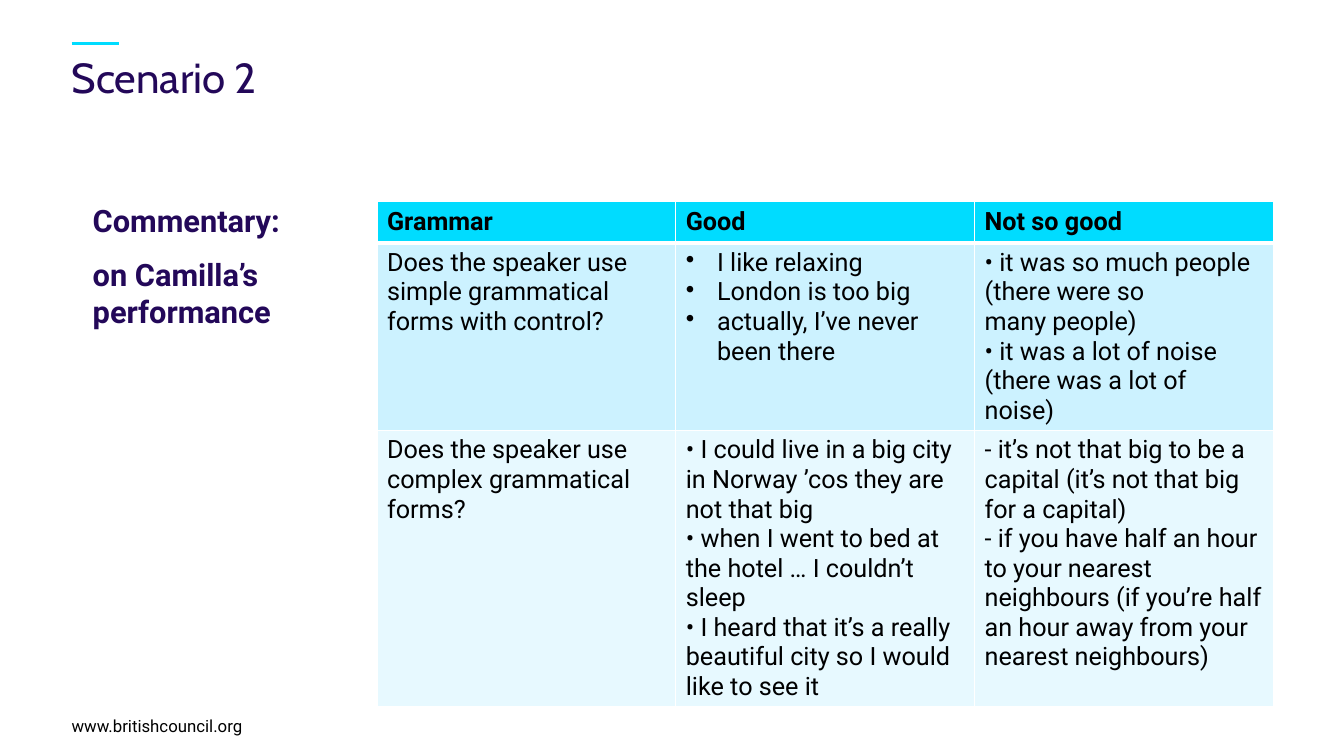
from lxml import etree
from pptx import Presentation
from pptx import util as u
from pptx.dml.color import RGBColor
from pptx.enum import shapes, text
from pptx.oxml import ns

SLIDE_W, SLIDE_H = u.Inches(13.33), u.Inches(7.5)
CYAN = RGBColor(0x00, 0xDC, 0xFF)
PALE = RGBColor(0xCC, 0xF2, 0xFF)
PALER = RGBColor(0xE7, 0xF9, 0xFF)
INDIGO = RGBColor(0x23, 0x08, 0x59)
BLACK = RGBColor(0x00, 0x00, 0x00)
WHITE = RGBColor(0xFF, 0xFF, 0xFF)
MARGIN = 5.33
TOP = 26.67

ROW_HEIGHTS = (5.47, 24.8, 36.53)
ROW_FILLS = (CYAN, PALE, PALER)
BULLETED = (1, 1)
GRAMMAR = (
    ("Grammar", "Good", "Not so good"),
    (
        "Does the speaker use simple grammatical forms with control?",
        "I like relaxing\nLondon is too big\nactually, I’ve never been there",
        "• it was so much people (there were so\nmany people)\n"
        "• it was a lot of noise (there was a lot of\nnoise)",
    ),
    (
        "Does the speaker use complex grammatical forms?",
        "• I could live in a big city in Norway ’cos they are not that big\n"
        "• when I went to bed at the hotel … I couldn’t sleep\n"
        "• I heard that it’s a really beautiful city so I would like to see it",
        "- it’s not that big to be a capital (it’s not that big for a capital)\n"
        "- if you have half an hour to your nearest neighbours "
        "(if you’re half an hour away from your nearest neighbours)",
    ),
)


def across(share):
    return round(SLIDE_W * share / 100)


def down(share):
    return round(SLIDE_H * share / 100)


def area(left, top, width, height):
    return across(left), down(top), across(width), down(height)


def set_bullet(paragraph, indent, symbol=None):
    props = paragraph._p.get_or_add_pPr()
    props.set("marL", str(indent))
    props.set("indent", str(-indent))
    if symbol:
        etree.SubElement(props, ns.qn("a:buChar")).set("char", symbol)
    else:
        etree.SubElement(props, ns.qn("a:buNone"))


def write(frame, wording, face, size, colour, bold=False):
    frame.text = wording
    for paragraph in frame.paragraphs:
        paragraph.alignment = text.PP_ALIGN.LEFT
        for run in paragraph.runs:
            run.font.name = face
            run.font.size = u.Pt(size)
            run.font.bold = bold
            run.font.color.rgb = colour


def place(box, bounds, anchor=text.MSO_ANCHOR.TOP):
    box.left, box.top, box.width, box.height = bounds
    frame = box.text_frame
    frame.margin_left = frame.margin_right = 0
    frame.margin_top = frame.margin_bottom = 0
    frame.word_wrap = True
    frame.auto_size = text.MSO_AUTO_SIZE.NONE
    frame.vertical_anchor = anchor
    return frame


def add_accent(slide):
    accent = slide.shapes.add_connector(
        shapes.MSO_CONNECTOR.STRAIGHT,
        across(MARGIN), down(5.73), across(8.85), down(5.73))
    accent.line.color.rgb = CYAN
    accent.line.width = u.Pt(2.4)
    etree.SubElement(accent._element.spPr, ns.qn("a:effectLst"))


def add_heading(slide):
    heading = place(slide.shapes.title, area(MARGIN, 7.33, 89.8, 11.6))
    write(heading, "Scenario 2", "Cabin", 30, INDIGO)
    heading.paragraphs[0].line_spacing = u.Pt(33)


def add_commentary(slide):
    commentary = place(slide.placeholders[1], area(6.9, TOP, 18.75, 57.87))
    write(commentary, "Commentary:\non Camilla’s performance", "Roboto", 22, INDIGO, True)
    for position, paragraph in enumerate(commentary.paragraphs):
        set_bullet(paragraph, 0)
        paragraph.space_before = u.Pt(6 if position else 0)
        paragraph.space_after = u.Pt(6)


def rule_cell(cell, is_header):
    props = cell._tc.get_or_add_tcPr()
    for side in "LRTB":
        points = 3 if is_header and side == "B" else 1
        edge = etree.SubElement(props, ns.qn(f"a:ln{side}"))
        edge.set("w", str(u.Pt(points)))
        fill = etree.SubElement(edge, ns.qn("a:solidFill"))
        etree.SubElement(fill, ns.qn("a:srgbClr")).set("val", str(WHITE))


def add_grammar_table(slide):
    bounds = area(28.05, TOP, 66.7, sum(ROW_HEIGHTS))
    table = slide.shapes.add_table(len(GRAMMAR), len(GRAMMAR[0]), *bounds).table
    for r, (row, height, shade) in enumerate(zip(GRAMMAR, ROW_HEIGHTS, ROW_FILLS)):
        table.rows[r].height = down(height)
        for c, wording in enumerate(row):
            cell = table.cell(r, c)
            write(cell.text_frame, wording, "Roboto", 18, BLACK, r == 0)
            rule_cell(cell, r == 0)
            cell.fill.solid()
            cell.fill.fore_color.rgb = shade
    for paragraph in table.cell(*BULLETED).text_frame.paragraphs:
        set_bullet(paragraph, u.Inches(0.31), "•")


def add_web_address(slide):
    bounds = area(MARGIN, 94.67, 85.67, 2.67)
    address = place(slide.shapes.add_textbox(*bounds), bounds, text.MSO_ANCHOR.BOTTOM)
    write(address, "www.britishcouncil.org", "Roboto", 12, BLACK)


def main():
    deck = Presentation()
    deck.slide_width, deck.slide_height = SLIDE_W, SLIDE_H
    slide = deck.slides.add_slide(deck.slide_layouts[1])
    add_accent(slide)
    add_heading(slide)
    add_commentary(slide)
    add_grammar_table(slide)
    add_web_address(slide)
    deck.save("out.pptx")


if __name__ == "__main__":
    main()
